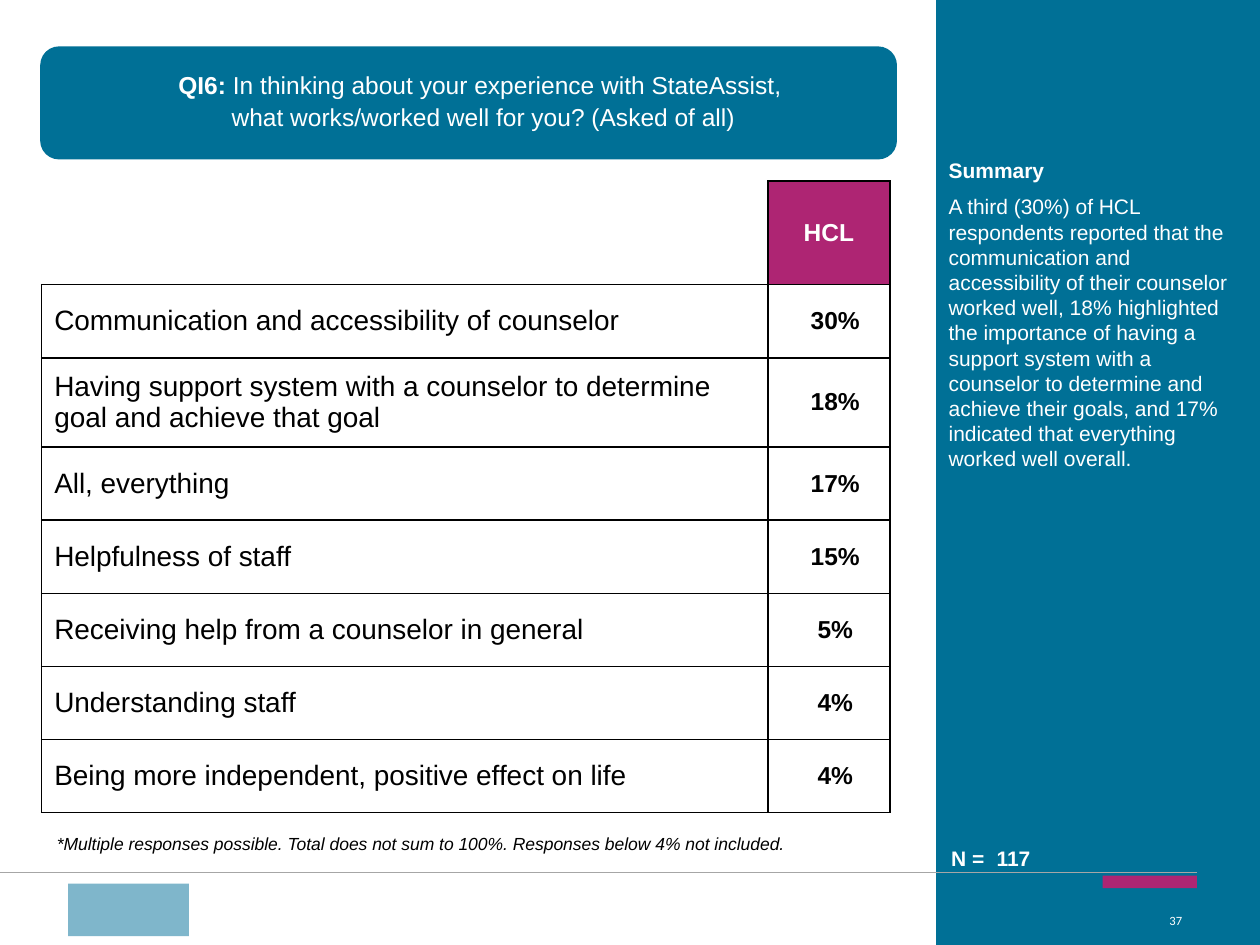
import pptx
import pptx.util
import pptx.dml.color
import pptx.enum.shapes
import pptx.enum.text
import pptx.oxml.ns
import lxml.etree

Pt = pptx.util.Pt
RGB = pptx.dml.color.RGBColor
SHAPE = pptx.enum.shapes.MSO_SHAPE
ALIGN = pptx.enum.text.PP_ALIGN
ANCHOR = pptx.enum.text.MSO_ANCHOR
qn = pptx.oxml.ns.qn

TEAL = RGB(0x00, 0x70, 0x96)
MAGENTA = RGB(0xAE, 0x25, 0x73)
LIGHT_TEAL = RGB(0x7F, 0xB6, 0xCB)
GREY = RGB(0xA6, 0xA6, 0xA6)
WHITE = RGB(0xFF, 0xFF, 0xFF)
BLACK = RGB(0x00, 0x00, 0x00)

ANSWERS = [
    ("Communication and accessibility of counselor", "30%"),
    ("Having support system with a counselor to determine goal and achieve that goal", "18%"),
    ("All, everything", "17%"),
    ("Helpfulness of staff", "15%"),
    ("Receiving help from a counselor in general", "5%"),
    ("Understanding staff", "4%"),
    ("Being more independent, positive effect on life", "4%"),
]
SUMMARY = (
    "A third (30%) of HCL respondents reported that the communication and "
    "accessibility of their counselor worked well, 18% highlighted the importance "
    "of having a support system with a counselor to determine and achieve their "
    "goals, and 17% indicated that everything worked well overall."
)


def add_run(p, text, size, color, bold=False, italic=False, font="Arial"):
    """Append one formatted run to a paragraph."""
    r = p.add_run()
    r.text = text
    r.font.name, r.font.size = font, Pt(size)
    r.font.bold, r.font.italic = bold, italic
    r.font.color.rgb = color
    return r


def add_frame(s, x, y, w, h):
    """Add a wrapping text box and return its text frame."""
    tf = s.shapes.add_textbox(Pt(x), Pt(y), Pt(w), Pt(h)).text_frame
    tf.word_wrap = True
    return tf


def add_label(s, x, y, w, h, text, size, color, bold=False, italic=False, before=0):
    """Add a text box holding a single paragraph."""
    p = add_frame(s, x, y, w, h).paragraphs[0]
    p.space_before = Pt(before)
    add_run(p, text, size, color, bold, italic)


def add_block(s, kind, x, y, w, h, color):
    """Add a flat filled shape without outline."""
    sp = s.shapes.add_shape(kind, Pt(x), Pt(y), Pt(w), Pt(h))
    sp.shadow.inherit = False
    sp.fill.solid()
    sp.fill.fore_color.rgb = color
    sp.line.fill.background()


def add_question(s, x, y, w, h):
    """Draw the question banner with its two centred lines."""
    add_block(s, SHAPE.ROUNDED_RECTANGLE, x, y, w, h, TEAL)
    tf = add_frame(s, x + 33, y + 10, w - 49, h - 13)
    lines = [
        [("QI6: ", True), ("In thinking about your experience with StateAssist, ", False)],
        [("what works/worked well for you? (Asked of all)", False)],
    ]
    for i, runs in enumerate(lines):
        p = tf.add_paragraph() if i else tf.paragraphs[0]
        p.alignment = ALIGN.CENTER
        p.space_before = Pt(1.5)
        for text, bold in runs:
            add_run(p, text, 14, WHITE, bold)


def add_summary(s, x, y, w, h):
    """Draw the side panel with its summary and base size."""
    add_block(s, SHAPE.RECTANGLE, x, y, w, h, TEAL)
    add_label(s, x, y + 86.4, w, 21.6, "Summary", 12, WHITE, bold=True)
    add_label(s, x, y + 107.3, w, 230.4, SUMMARY, 12, WHITE, before=2.4)
    add_label(s, x + 1.4, y + 479.5, 46.8, 21.6, "N =", 12, WHITE, bold=True)
    add_label(s, x + 27.4, y + 479.5, 40, 21.6, "117", 12, WHITE, bold=True)


def set_borders(cell, sides):
    """Draw black borders on the named sides and clear the others."""
    tcPr = cell._tc.get_or_add_tcPr()
    for i, side in enumerate("LRTB"):
        ln = lxml.etree.Element(qn("a:ln" + side), w=str(Pt(1)))
        if side in sides:
            fill = lxml.etree.SubElement(ln, qn("a:solidFill"))
            lxml.etree.SubElement(fill, qn("a:srgbClr"), val=str(BLACK))
        else:
            lxml.etree.SubElement(ln, qn("a:noFill"))
        tcPr.insert(i, ln)


def fill_cell(cell, text, size, color, bold, align, margins):
    """Write one table cell with its alignment and margins."""
    cell.vertical_anchor = ANCHOR.MIDDLE
    cell.margin_left, cell.margin_top, cell.margin_right, cell.margin_bottom = map(Pt, margins)
    p = cell.text_frame.paragraphs[0]
    p.alignment = align
    add_run(p, text, size, color, bold)


def add_answers(s, x, y, w, h):
    """Draw the table of answers and their shares."""
    tbl = s.shapes.add_table(len(ANSWERS) + 1, 2, Pt(x), Pt(y), Pt(w), Pt(h)).table
    tbl.first_row = tbl.horz_banding = False
    tbl.columns[0].width, tbl.columns[1].width = Pt(w - 69.8), Pt(69.8)
    heights = [59.2, 41.8, 51] + [41.8] * 5
    for row, height in zip(tbl.rows, heights):
        row.height = Pt(height)
    for i, cell in enumerate(tbl.iter_cells()):
        cell.fill.background()
        set_borders(cell, "LRTB" if i else "RB")
    head = tbl.cell(0, 1)
    head.fill.solid()
    head.fill.fore_color.rgb = MAGENTA
    fill_cell(head, "HCL", 14, WHITE, True, ALIGN.CENTER, (5, 3, 5, 3))
    for i, (answer, share) in enumerate(ANSWERS, 1):
        fill_cell(tbl.cell(i, 0), answer, 16, BLACK, False, ALIGN.LEFT, (7.2, 0, 0, 0))
        fill_cell(tbl.cell(i, 1), share, 14, BLACK, True, ALIGN.CENTER, (7.2, 0, 0, 0))


def add_footer(s, x, y, w, h):
    """Draw the footer rule, accent bar, plain block and page number."""
    line = s.shapes.add_connector(
        pptx.enum.shapes.MSO_CONNECTOR.STRAIGHT, Pt(x), Pt(y), Pt(x + w), Pt(y))
    line.line.color.rgb, line.line.width = GREY, Pt(0.75)
    lxml.etree.SubElement(line._element.spPr, qn("a:effectLst"))
    add_block(s, SHAPE.RECTANGLE, x + w - 54, y + 2, 54, 7.2, MAGENTA)
    add_block(s, SHAPE.RECTANGLE, x + 39, y + 6.5, 69, h - 11.5, LIGHT_TEAL)
    tf = add_frame(s, x + w - 271.4, y + 15.8, 270, 21.6)
    tf.vertical_anchor = ANCHOR.MIDDLE
    p = tf.paragraphs[0]
    p.alignment = ALIGN.RIGHT
    r = add_run(p, "37", 9, WHITE, font="Calibri")
    r.font._element.set("cap", "small")


def main():
    """Build and save the slide."""
    prs = pptx.Presentation()
    prs.slide_width, prs.slide_height = Pt(720), Pt(540)
    s = prs.slides.add_slide(prs.slide_layouts[6])
    add_question(s, 23, 26.5, 489.6, 64.6)
    add_summary(s, 535, 0, 185, 540)
    add_answers(s, 23.8, 103.5, 484.8, 361.2)
    add_label(s, 25.4, 472.3, 483, 21.6,
              "*Multiple responses possible. Total does not sum to 100%. "
              "Responses below 4% not included.", 10, BLACK, italic=True, before=2)
    add_footer(s, 0, 498.4, 684, 41.6)
    prs.save("out.pptx")


if __name__ == "__main__":
    main()
